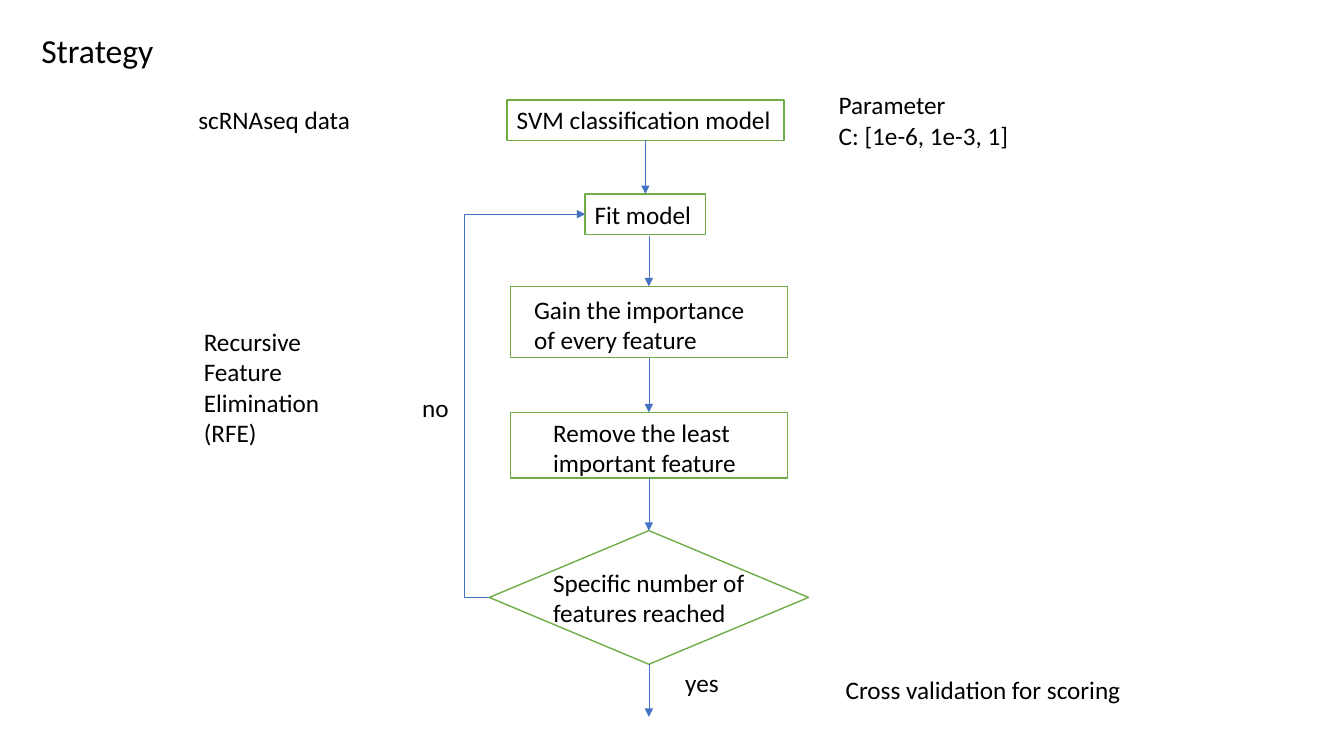
from dataclasses import dataclass

from lxml import etree
from pptx import Presentation
from pptx.dml.color import RGBColor
from pptx.enum import shapes, text
from pptx.oxml import ns
from pptx.shapes.autoshape import Shape
from pptx.shapes.connector import Connector
from pptx.text.text import TextFrame
from pptx.util import Pt

BLACK = RGBColor(0x00, 0x00, 0x00)
GREEN = RGBColor(0x70, 0xAD, 0x47)
BLUE = RGBColor(0x44, 0x72, 0xC4)
FONT = "Calibri"
TOP, LEFT, BOTTOM = 0, 1, 2  # connection sites


@dataclass
class Label:
    left: float
    top: float
    width: float
    lines: tuple[str, ...]


@dataclass
class Step:
    """A flowchart outline, placed by its horizontal centre."""
    centre: float
    top: float
    width: float
    height: float
    kind: shapes.MSO_SHAPE = shapes.MSO_SHAPE.RECTANGLE


UPPER_AXIS, LOWER_AXIS = 461, 463.5
LINE_HEIGHT = 21.6

STEP_LABELS = [
    Label(362, 71.3, 198, ("SVM classification model",)),
    Label(417.6, 138.5, 84.2, ("Fit model",)),
    Label(374.4, 206.6, 170.6, ("Gain the importance", "of every feature")),
    Label(388, 294.5, 146.2, ("Remove the least", "important feature")),
    Label(388, 401.8, 157, ("Specific number of", "features reached")),
]
SIDE_LABELS = [
    Label(482.4, 473, 38.9, ("yes",)),
    Label(294.5, 276.5, 33.8, ("no",)),
    Label(138.5, 229.7, 97.9, ("Recursive", "Feature", "Elimination", "(RFE)")),
    Label(597, 478, 213, ("Cross validation for scoring",)),
    Label(592, 60.5, 137.5, ("Parameter", "C: [1e-6, 1e-3, 1]")),
    Label(134.6, 71.3, 123.8, ("scRNAseq data",)),
]
STEPS = [
    Step(UPPER_AXIS, 71.3, 198, 29),
    Step(UPPER_AXIS, 138.5, 86, 29),
    Step(LOWER_AXIS, 204.5, 198, 51),
    Step(LOWER_AXIS, 294.5, 198, 47),
    Step(LOWER_AXIS, 379, 228, 95.5, shapes.MSO_SHAPE.DIAMOND),
]


def write(frame: TextFrame, lines: tuple[str, ...], size: float) -> None:
    frame.word_wrap = False
    frame.auto_size = text.MSO_AUTO_SIZE.SHAPE_TO_FIT_TEXT
    frame.vertical_anchor = text.MSO_ANCHOR.TOP
    for number, line in enumerate(lines):
        paragraph = frame.add_paragraph() if number else frame.paragraphs[0]
        paragraph.alignment = text.PP_ALIGN.LEFT
        run = paragraph.add_run()
        run.text = line
        run.font.size = Pt(size)
        run.font.name = FONT
        run.font.color.rgb = BLACK


def draw_label(slide, label: Label) -> None:
    height = LINE_HEIGHT * len(label.lines) + 7.4
    box = slide.shapes.add_textbox(
        Pt(label.left), Pt(label.top), Pt(label.width), Pt(height))
    write(box.text_frame, label.lines, 18)


def draw_step(slide, step: Step) -> Shape:
    outline = slide.shapes.add_shape(
        step.kind, Pt(step.centre - step.width / 2), Pt(step.top),
        Pt(step.width), Pt(step.height))
    outline.shadow.inherit = False
    outline.fill.background()
    outline.line.color.rgb = GREEN
    outline.line.width = Pt(1)
    return outline


def draw_arrow(slide, start: tuple[float, float] = (0, 0),
               end: tuple[float, float] = (0, 0),
               kind: shapes.MSO_CONNECTOR = shapes.MSO_CONNECTOR.STRAIGHT) -> Connector:
    arrow = slide.shapes.add_connector(kind, *map(Pt, start + end))
    arrow.line.color.rgb = BLUE
    arrow.line.width = Pt(0.5)
    line = arrow.line._get_or_add_ln()
    etree.SubElement(line, ns.qn("a:tailEnd"), type="triangle")
    etree.SubElement(arrow._element.spPr, ns.qn("a:effectLst"))
    return arrow


def main() -> None:
    deck = Presentation()
    deck.slide_width, deck.slide_height = Pt(960), Pt(540)
    slide = deck.slides.add_slide(deck.slide_layouts[5])

    # Title
    title = slide.shapes.title
    title.left, title.top, title.width, title.height = map(Pt, (22.3, 18, 95, 36))
    write(title.text_frame, ("Strategy",), 24)

    # Flowchart steps
    for label in STEP_LABELS:
        draw_label(slide, label)
    outlines = [draw_step(slide, step) for step in STEPS]
    svm, fit, importance, removal, decision = outlines

    # Arrows down the flow
    for upper, lower in ((svm, fit), (importance, removal), (removal, decision)):
        arrow = draw_arrow(slide)
        arrow.begin_connect(upper, BOTTOM)
        arrow.end_connect(lower, TOP)
    fit_exit = draw_arrow(slide, start=(LOWER_AXIS, 168.5))
    fit_exit.end_connect(importance, TOP)
    yes_exit = draw_arrow(slide, end=(LOWER_AXIS, 512))
    yes_exit.begin_connect(decision, BOTTOM)

    # Loop back while the answer is no
    loop = draw_arrow(slide, kind=shapes.MSO_CONNECTOR.ELBOW)
    loop.begin_connect(decision, LEFT)
    loop.end_connect(fit, LEFT)
    guides = loop._element.spPr.find(ns.qn("a:prstGeom")).get_or_add_avLst()
    etree.SubElement(guides, ns.qn("a:gd"), name="adj1", fmla="val -26200")

    # Side notes
    for label in SIDE_LABELS:
        draw_label(slide, label)

    deck.save("out.pptx")


if __name__ == "__main__":
    main()
